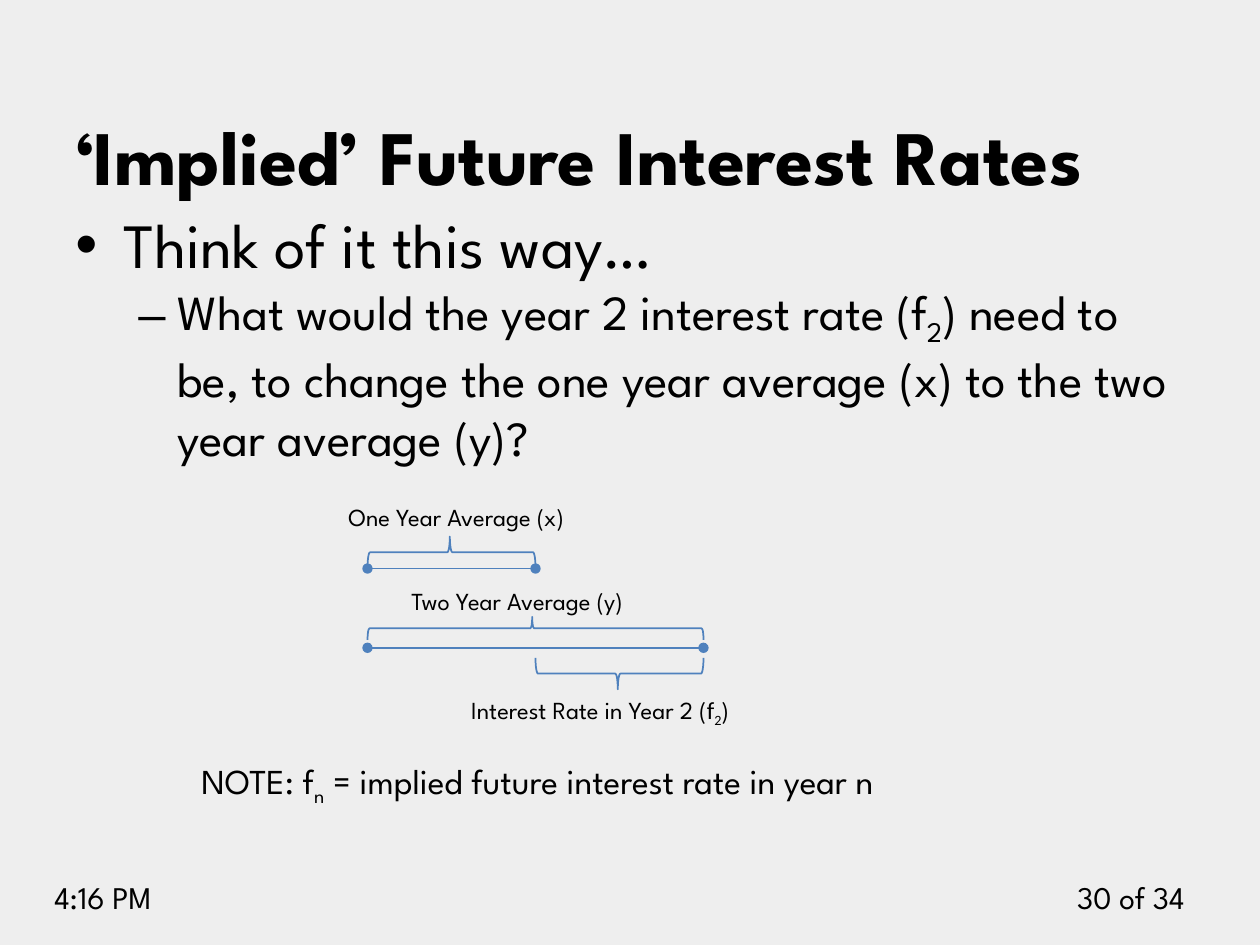
from lxml.etree import SubElement
from pptx import Presentation
from pptx.dml.color import RGBColor
from pptx.enum.shapes import MSO_CONNECTOR as Connector, MSO_SHAPE as Shape
from pptx.enum.text import MSO_ANCHOR as Anchor, PP_ALIGN as Align
from pptx.oxml.ns import qn
from pptx.util import Inches, Pt

COLORS = {"background": "EEEEEE", "text": "000000", "diagram": "4F81BD"}
FONT = "League Spartan"
MATH_FONT = "Calibri"
COLUMNS, ROWS = 120, 90
WIDTH, HEIGHT = Inches(10), Inches(7.5)
START, YEAR = 35, 16
LABEL_ROWS = 4.1


def col(count):
    """Return the length of a number of grid columns."""
    return round(WIDTH * count / COLUMNS)


def row(count):
    """Return the length of a number of grid rows."""
    return round(HEIGHT * count / ROWS)


def color(name):
    """Return a palette colour."""
    return RGBColor.from_string(COLORS[name])


def add_frame(slide, left, top, width, height, anchor=Anchor.TOP):
    """Add a wrapping text box and return its text frame."""
    frame = slide.shapes.add_textbox(col(left), row(top), col(width), row(height)).text_frame
    frame.word_wrap = True
    frame.vertical_anchor = anchor
    return frame


def write(paragraph, parts, size, bold=False):
    """Write (text, subscript, font) parts into a paragraph."""
    for text, subscript, font in parts:
        run = paragraph.add_run()
        run.text = text
        run.font.size = Pt(size)
        run.font.name = font
        run.font.bold = bold
        run.font.color.rgb = color("text")
        if subscript:
            run.font._element.set("baseline", "-25000")


def plain(text):
    """Return a part in the main font."""
    return text, False, FONT


def sub(text, font=FONT):
    """Return a subscript part."""
    return text, True, font


def indent(paragraph, margin, hanging=0, bullet=None):
    """Set a paragraph's indent in inches and its bullet."""
    properties = paragraph._p.get_or_add_pPr()
    properties.set("marL", str(Inches(margin)))
    properties.set("indent", str(-Inches(hanging)))
    if bullet:
        SubElement(properties, qn("a:buFont")).set("typeface", "Arial")
        SubElement(properties, qn("a:buChar")).set("char", bullet)


def add_label(slide, left, top, width, parts, size=14, align=Align.LEFT):
    """Add a one-line label."""
    paragraph = add_frame(slide, left, top, width, LABEL_ROWS).paragraphs[0]
    paragraph.alignment = align
    write(paragraph, parts, size)


def add_body(slide):
    """Add the question and the note."""
    frame = add_frame(slide, 6, 19, 108, 61.4)
    lead, question, note = frame.paragraphs[0], frame.add_paragraph(), frame.add_paragraph()
    indent(lead, 0.38, 0.38, "•")
    write(lead, [plain("Think of it this way…")], 36)
    indent(question, 0.81, 0.31, "–")
    write(question, [
        plain("What would the year 2 interest rate (f"), sub("2"),
        plain(") need to be, to change the one year average (x) to the two year average (y)?"),
    ], 28)
    indent(note, 1)
    note.space_before = Pt(168)
    write(note, [plain("NOTE: f"), sub("n"),
                 plain(" = implied future interest rate in year n")], 20)


def add_span(slide, years, level):
    """Add a time span with round ends."""
    span = slide.shapes.add_connector(
        Connector.STRAIGHT, col(START), row(level), col(START + years * YEAR), row(level))
    span.line.color.rgb = color("diagram")
    span.line.width = Pt(1)
    outline = span.line._get_or_add_ln()
    for end in ("a:headEnd", "a:tailEnd"):
        SubElement(outline, qn(end)).set("type", "oval")
    SubElement(span._element.spPr, qn("a:effectLst"))


def add_brace(slide, first_year, years, top, depth, upward=True):
    """Add a horizontal brace over a number of years."""
    length = years * YEAR
    middle = START + first_year * YEAR + length / 2
    brace = slide.shapes.add_shape(
        Shape.LEFT_BRACE, col(middle - depth / 2), row(top + depth / 2 - length / 2),
        col(depth), row(length))
    brace.rotation = 90 if upward else 270
    brace.adjustments[0] = 0.08
    brace.adjustments[1] = 0.51 if upward else 0.49
    brace.shadow.inherit = False
    brace.fill.background()
    brace.line.color.rgb = color("diagram")
    brace.line.width = Pt(1)


def add_diagram(slide):
    """Add the one and two year spans with their labels."""
    add_span(slide, 1, 54.15)
    add_span(slide, 2, 61.7)
    add_brace(slide, 0, 2, 58.75, 2.2)
    add_brace(slide, 0, 1, 51.1, 3)
    add_brace(slide, 1, 1, 62.65, 3, upward=False)
    add_label(slide, 32, 47.2, 28.7, [plain("One Year Average (x)")])
    add_label(slide, 43.7, 65.6, 31, [
        plain("Interest Rate in Year 2 ("), ("f", False, MATH_FONT),
        sub("2", MATH_FONT), plain(")")])
    add_label(slide, 38, 55.2, 27.6, [plain("Two Year Average (y)")])


def main():
    """Build and save the slide."""
    deck = Presentation()
    deck.slide_width, deck.slide_height = WIDTH, HEIGHT
    slide = deck.slides.add_slide(deck.slide_layouts[6])
    slide.background.fill.solid()
    slide.background.fill.fore_color.rgb = color("background")
    add_label(slide, 100, 83, 14, [plain("30 of 34")], 18, Align.RIGHT)
    add_label(slide, 4, 83, 19, [plain("4:16 PM")], 18)
    add_body(slide)
    title = add_frame(slide, 6, 4.7, 108, 15, Anchor.BOTTOM)
    write(title.paragraphs[0], [plain("‘Implied’ Future Interest Rates")], 44, bold=True)
    add_diagram(slide)
    deck.save("out.pptx")


if __name__ == "__main__":
    main()
